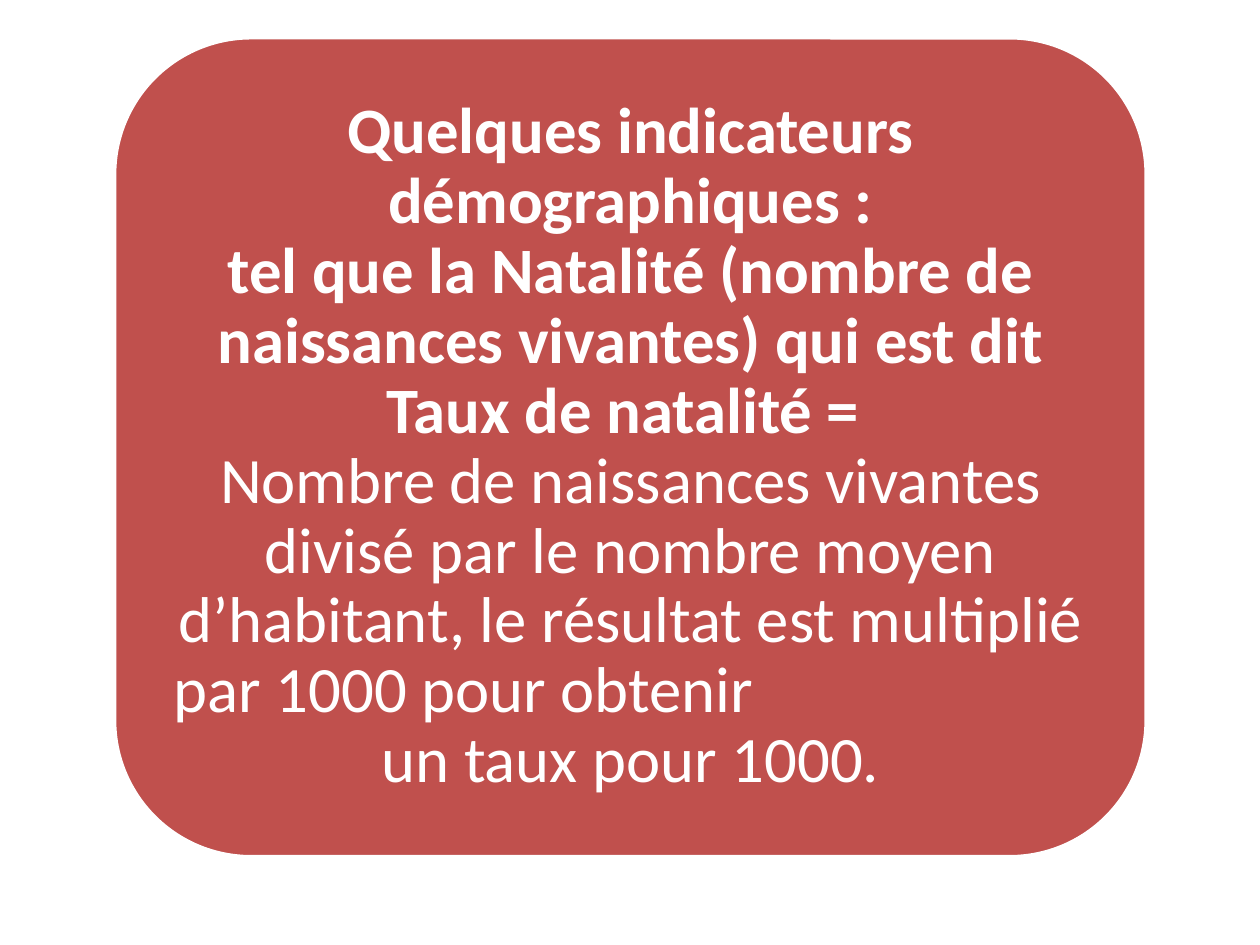
from pptx import Presentation
from pptx.dml.color import RGBColor
from pptx.enum.shapes import MSO_SHAPE as Shape
from pptx.enum.text import MSO_ANCHOR as Anchor, PP_ALIGN as Align
from pptx.util import Pt

COLORS = {"card": "C0504D", "white": "FFFFFF"}
FONT = "Calibri"
HEADING = (
    "Quelques indicateurs démographiques :",
    "tel que la Natalité (nombre de naissances vivantes) qui est dit "
    "Taux de natalité = ",
)
FORMULA = (
    "Nombre de naissances vivantes divisé par le nombre moyen d’habitant, "
    "le résultat est multiplié"
)


def color(name):
    return RGBColor.from_string(COLORS[name])


def add_card(page, left, top, width, height):
    card = page.shapes.add_shape(
        Shape.ROUNDED_RECTANGLE, Pt(left), Pt(top), Pt(width), Pt(height)
    )
    card.shadow.inherit = False
    card.fill.solid()
    card.fill.fore_color.rgb = color("card")
    card.line.color.rgb = color("white")
    card.line.width = Pt(2)
    frame = card.text_frame
    frame.word_wrap = True
    frame.vertical_anchor = Anchor.MIDDLE
    frame.margin_left = frame.margin_right = Pt(11)
    frame.margin_top = frame.margin_bottom = Pt(5.5)
    return frame


def format_para(para, align=Align.CENTER):
    para.alignment = align
    para.line_spacing = 0.9
    para.space_before = para.space_after = Pt(0)
    return para


def add_text(para, text, bold=False, size=37):
    span = para.add_run()
    span.text = text
    span.font.name = FONT
    span.font.size = Pt(size)
    span.font.bold = bold
    span.font.color.rgb = color("white")


def main():
    deck = Presentation()
    deck.slide_width, deck.slide_height = Pt(720), Pt(540)
    page = deck.slides.add_slide(deck.slide_layouts[6])

    frame = add_card(page, 65.5, 21.6, 589.5, 468)
    para = format_para(frame.paragraphs[0])
    for line in HEADING:
        add_text(para, line, bold=True)
        para.add_line_break()
    add_text(para, FORMULA)
    add_text(format_para(frame.add_paragraph(), Align.LEFT), "par 1000 pour obtenir")
    add_text(format_para(frame.add_paragraph()), "un taux pour 1000.")

    deck.save("out.pptx")


if __name__ == "__main__":
    main()
